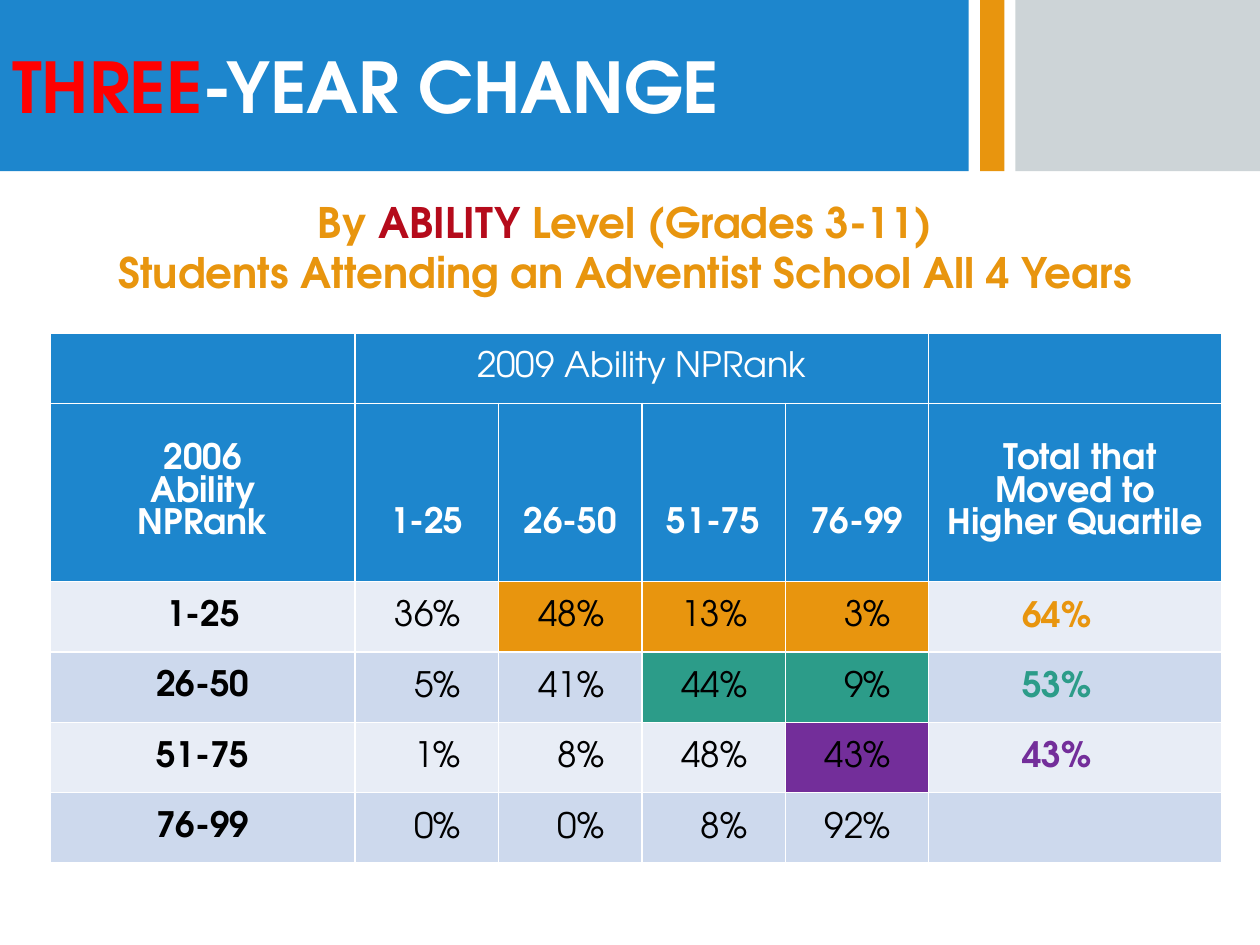
"""Build the three-year change slide with its table of ability quartiles."""
from dataclasses import dataclass

from lxml import etree
from pptx import Presentation, util as u
from pptx.dml.color import RGBColor
from pptx.enum import shapes, text
from pptx.oxml import ns


@dataclass(frozen=True)
class Theme:
    font: str = "TeX Gyre Adventor"
    blue: str = "1D86CD"
    gold: str = "E8950E"
    gray: str = "CDD4D7"
    red: str = "FF0000"
    wine: str = "B50B1B"
    teal: str = "2C9C89"
    plum: str = "732E9A"
    white: str = "FFFFFF"
    black: str = "000000"
    light: str = "E8EDF6"
    dark: str = "CDD9ED"
    title: int = 40
    lead: int = 24
    body: int = 20


def add_run(para, words, size, color, bold=True):
    run = para.add_run()
    run.text = words
    run.font.name = theme.font
    run.font.size = u.Pt(size)
    run.font.bold = bold
    run.font.color.rgb = RGBColor.from_string(color)


def paint(cell, color):
    props = cell._tc.get_or_add_tcPr()
    for side in "LRTB":
        line = etree.SubElement(props, ns.qn(f"a:ln{side}"), w=str(u.Pt(1)))
        solid = etree.SubElement(line, ns.qn("a:solidFill"))
        etree.SubElement(solid, ns.qn("a:srgbClr"), val=theme.white)
    cell.fill.solid()
    cell.fill.fore_color.rgb = RGBColor.from_string(color)
    cell.vertical_anchor = text.MSO_ANCHOR.MIDDLE


theme = Theme()
center, right = text.PP_ALIGN.CENTER, text.PP_ALIGN.RIGHT
deck = Presentation()
deck.slide_width, deck.slide_height = u.Cm(25.4), u.Cm(19.05)
slide = deck.slides.add_slide(deck.slide_layouts[6])

for left, width, color in [(20.47, 4.93, theme.gray), (19.76, 0.49, theme.gold),
                           (0, 19.53, theme.blue)]:
    band = slide.shapes.add_shape(shapes.MSO_SHAPE.RECTANGLE,
                                  u.Cm(left), 0, u.Cm(width), u.Cm(3.45))
    band.shadow.inherit = False
    band.fill.solid()
    band.fill.fore_color.rgb = RGBColor.from_string(color)
    band.line.fill.background()

frame = band.text_frame
frame.margin_top = frame.margin_bottom = 0
frame.vertical_anchor = text.MSO_ANCHOR.MIDDLE
para = frame.paragraphs[0]
para.alignment = text.PP_ALIGN.LEFT
add_run(para, "THREE", theme.title, theme.red)
add_run(para, "-YEAR CHANGE", theme.title, theme.white)

box = slide.shapes.add_textbox(u.Cm(1.02), u.Cm(3.83), u.Cm(23.15), u.Cm(2.41))
box.text_frame.word_wrap = True
para = box.text_frame.paragraphs[0]
para.alignment = center
add_run(para, "By ", theme.lead, theme.gold)
add_run(para, "ABILITY ", theme.lead, theme.wine)
add_run(para, "Level (Grades 3-11)", theme.lead, theme.gold)
para.add_line_break()
add_run(para, "Students Attending an Adventist School All 4 Years", theme.lead, theme.gold)

widths = [6.14] + [2.89] * 4 + [5.91]
heights = [1.42, 3.59] + [1.42] * 4
table = slide.shapes.add_table(
    len(heights), len(widths), u.Cm(1.02), u.Cm(6.71),
    u.Cm(sum(widths)), u.Cm(sum(heights))).table
for col, width in zip(table.columns, widths):
    col.width = u.Cm(width)
for row, height in zip(table.rows, heights):
    row.height = u.Cm(height)

ranks = ["1-25", "26-50", "51-75", "76-99"]
for col in range(len(widths)):
    paint(table.cell(0, col), theme.blue)
top = table.cell(0, 1)
top.merge(table.cell(0, 4))
para = top.text_frame.paragraphs[0]
para.alignment = center
add_run(para, "2009 Ability NPRank", theme.body, theme.white, False)

heads = [["2006", "Ability", "NPRank"], *([rank] for rank in ranks),
         [" Total that Moved to Higher Quartile"]]
for col, lines in enumerate(heads):
    cell = table.cell(1, col)
    paint(cell, theme.blue)
    if 0 < col < 5:
        cell.vertical_anchor = text.MSO_ANCHOR.BOTTOM
        cell.margin_bottom = u.Cm(0.84)
    for num, words in enumerate(lines):
        frame = cell.text_frame
        para = frame.add_paragraph() if num else frame.paragraphs[0]
        para.alignment = center
        add_run(para, words, theme.body, theme.white)

shares = [[36, 48, 13, 3], [5, 41, 44, 9], [1, 8, 48, 43], [0, 0, 8, 92]]
totals = ["64%", "53%", "43%", ""]
accents = [theme.gold, theme.teal, theme.plum, theme.black]
for num, (rank, share, total, accent) in enumerate(zip(ranks, shares, totals, accents)):
    stripe = theme.dark if num % 2 else theme.light
    words = [rank, *(f"{part}%" for part in share), total]
    for col, word in enumerate(words):
        cell = table.cell(num + 2, col)
        inner = 0 < col < 5
        paint(cell, accent if inner and col > num + 1 else stripe)
        if not word:
            continue
        if col:
            cell.margin_left = cell.margin_top = u.Cm(0.03)
            cell.margin_right, cell.margin_bottom = u.Cm(0.76), 0
        para = cell.text_frame.paragraphs[0]
        para.alignment = right if inner else center
        add_run(para, word, theme.body, accent if col == 5 else theme.black, not inner)

deck.save("out.pptx")
